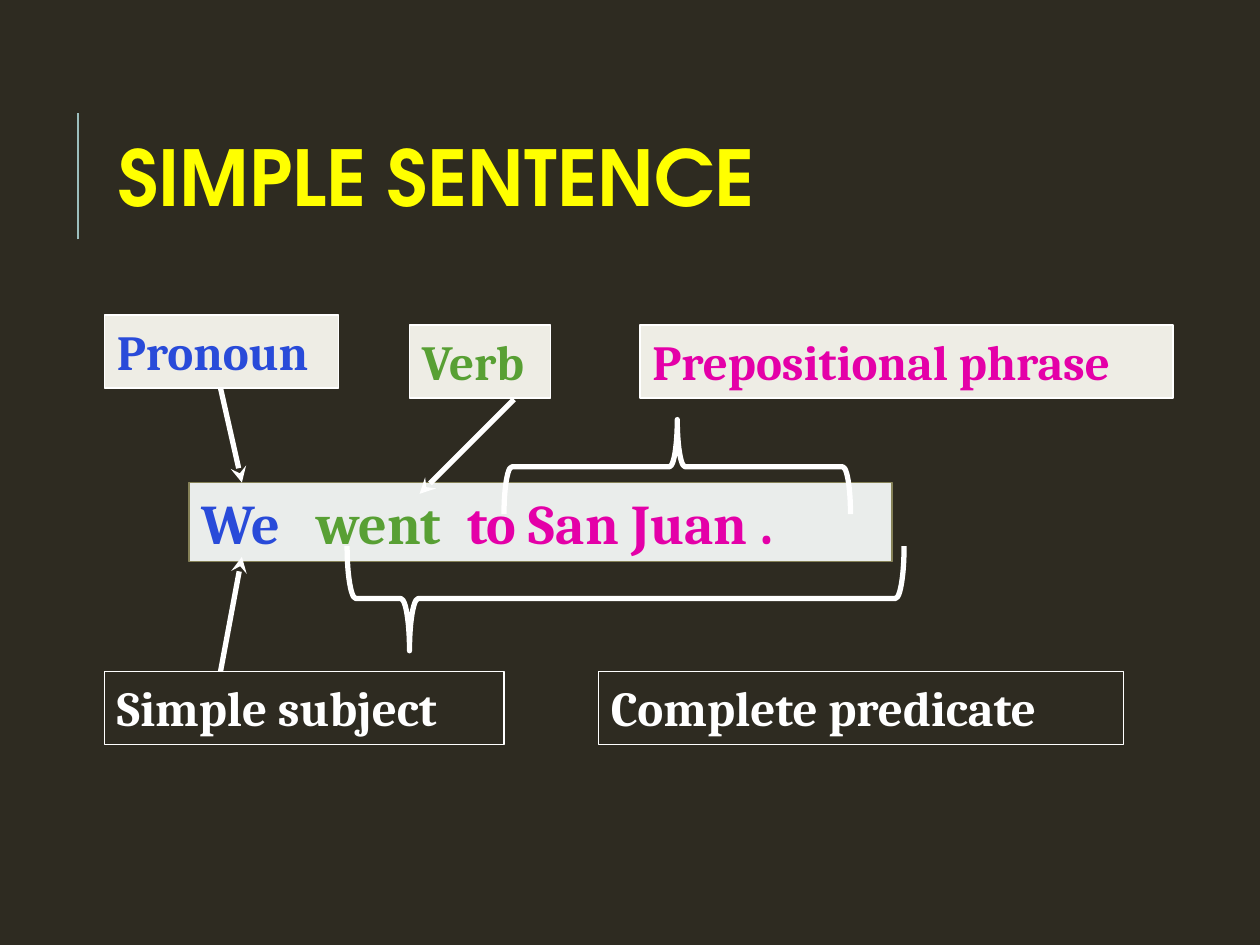
from lxml import etree
from pptx import Presentation
from pptx import util as u
from pptx.dml.color import RGBColor
from pptx.enum import shapes, text
from pptx.oxml import ns

DARK = RGBColor(0x2E, 0x2B, 0x21)
WHITE = RGBColor(0xFF, 0xFF, 0xFF)
CREAM = RGBColor(0xEE, 0xED, 0xE5)
MIST = RGBColor(0xEA, 0xED, 0xEB)
OLIVE = RGBColor(0x85, 0x81, 0x57)
TEAL = RGBColor(0x9C, 0xBE, 0xBD)
YELLOW = RGBColor(0xFF, 0xFF, 0x00)
BLUE = RGBColor(0x29, 0x4B, 0xD9)
GREEN = RGBColor(0x58, 0xA0, 0x34)
PINK = RGBColor(0xE4, 0x00, 0xA8)


class Diagram:
    body_font = "Cambria"
    title_font = "TeX Gyre Adventor"

    def __init__(self, slide):
        self.s = slide
        fill = slide.background.fill
        fill.solid()
        fill.fore_color.rgb = DARK

    def add_runs(self, p, runs, size, font):
        for words, color in runs:
            r = p.add_run()
            r.text = words
            r.font.size = u.Pt(size)
            r.font.name = font
            r.font.bold = True
            r.font.color.rgb = color

    def title(self, words, box):
        sp = self.s.shapes.add_textbox(*map(u.Inches, box))
        tf = sp.text_frame
        tf.word_wrap = True
        tf.vertical_anchor = text.MSO_ANCHOR.MIDDLE
        p = tf.paragraphs[0]
        p.line_spacing = 0.8
        self.add_runs(p, [(words, YELLOW)], 44, self.title_font)

    def shape(self, kind, box, line, width):
        sp = self.s.shapes.add_shape(kind, *map(u.Inches, box))
        sp.shadow.inherit = False
        sp.line.color.rgb = line
        sp.line.width = u.Pt(width)
        return sp

    def label(self, runs, box, fill, line=WHITE, size=28, tabs=()):
        sp = self.shape(shapes.MSO_SHAPE.RECTANGLE, box, line, 0.75)
        sp.fill.solid()
        sp.fill.fore_color.rgb = fill
        tf = sp.text_frame
        tf.word_wrap = True
        tf.vertical_anchor = text.MSO_ANCHOR.TOP
        p = tf.paragraphs[0]
        p.alignment = text.PP_ALIGN.LEFT
        if tabs:
            stops = etree.SubElement(p._p.get_or_add_pPr(), ns.qn("a:tabLst"))
            for pos in tabs:
                etree.SubElement(stops, ns.qn("a:tab"), pos=str(u.Inches(pos)), algn="l")
        self.add_runs(p, runs, size, self.body_font)

    def brace(self, box, rotation, tip):
        sp = self.shape(shapes.MSO_SHAPE.LEFT_BRACE, box, WHITE, 3)
        sp.fill.background()
        sp.rotation = rotation
        sp.adjustments[0] = 0.083
        sp.adjustments[1] = tip

    def line(self, start, end, color=WHITE, width=3, arrow=True):
        c = self.s.shapes.add_connector(
            shapes.MSO_CONNECTOR.STRAIGHT, *map(u.Inches, start + end))
        c.line.color.rgb = color
        c.line.width = u.Pt(width)
        if arrow:
            ln = c._element.spPr.find(ns.qn("a:ln"))
            etree.SubElement(ln, ns.qn("a:tailEnd"), type="stealth")
        etree.SubElement(c._element.spPr, ns.qn("a:effectLst"))


def main():
    prs = Presentation()
    prs.slide_width = u.Inches(10)
    prs.slide_height = u.Inches(7.5)
    d = Diagram(prs.slides.add_slide(prs.slide_layouts[6]))

    d.line((0.62, 1.9), (0.62, 0.9), TEAL, 1.5, arrow=False)
    d.title("SIMPLE SENTENCE", (0.84, 0.64, 7.97, 1.64))
    d.label([("We\t", BLUE), ("went\t", GREEN), ("to San Juan .", PINK)],
            (1.5, 3.83, 5.58, 0.63), MIST, OLIVE, 32, tabs=(0.91, 2.11))

    for words, color, x, y, w, fill in (
        ("Pronoun", BLUE, 0.83, 2.5, 1.86, CREAM),
        ("Verb", GREEN, 3.25, 2.58, 1.12, CREAM),
        ("Simple subject", WHITE, 0.83, 5.33, 3.17, DARK),
        ("Complete predicate", WHITE, 4.75, 5.33, 4.17, DARK),
        ("Prepositional phrase", PINK, 5.08, 2.58, 4.23, CREAM),
    ):
        d.label([(words, color)], (x, y, w, 0.58), fill)

    for start, end in (
        ((1.75, 3.08), (1.92, 3.83)),
        ((1.75, 5.33), (1.92, 4.42)),
        ((4.08, 3.17), (3.33, 3.92)),
    ):
        d.line(start, end)

    d.brace((4.55, 2.54, 0.83, 4.42), 270, 0.112)
    d.brace((5, 2.33, 0.75, 2.75), 90, 0.5)
    prs.save("out.pptx")


if __name__ == "__main__":
    main()
